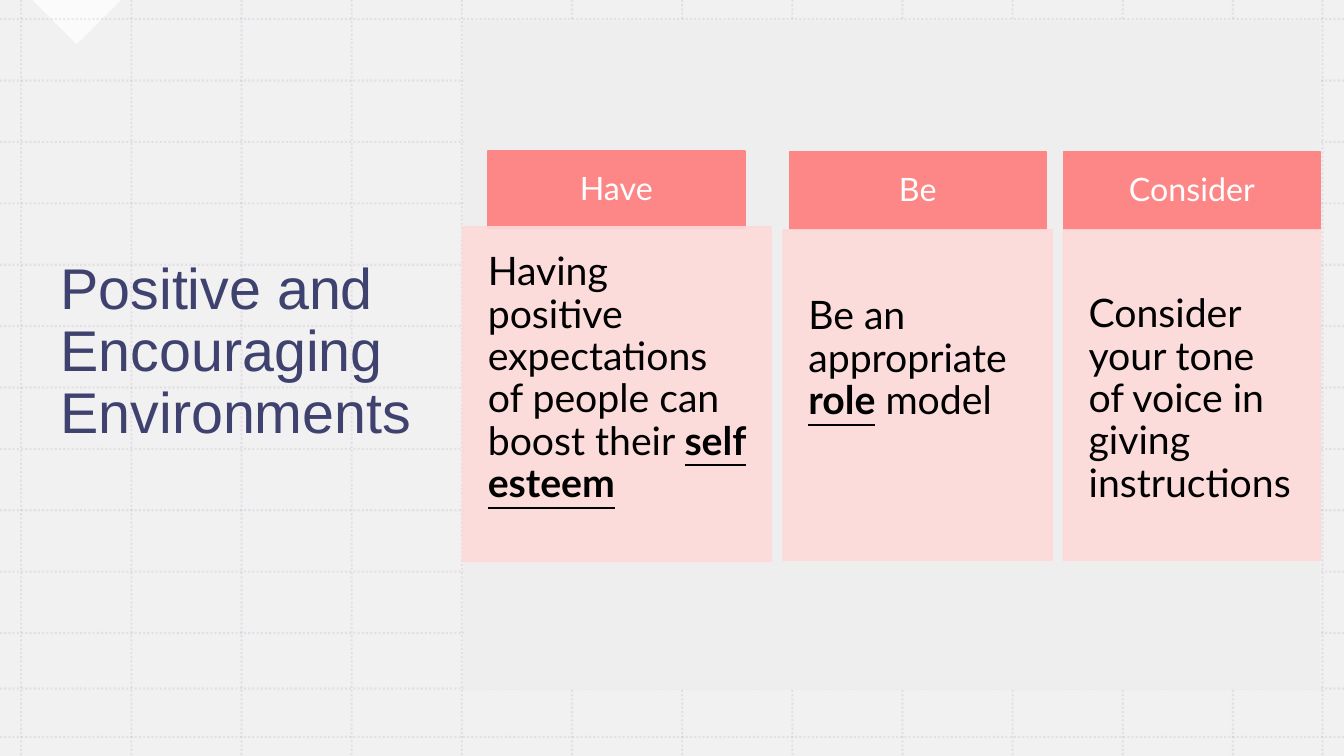
from lxml import etree
from pptx import Presentation
from pptx.dml.color import RGBColor
from pptx.enum.dml import MSO_LINE
from pptx.enum.shapes import MSO_CONNECTOR, MSO_SHAPE
from pptx.enum.text import MSO_ANCHOR, MSO_AUTO_SIZE, PP_ALIGN
from pptx.oxml.ns import qn
from pptx.util import Pt

STRAIGHT = MSO_CONNECTOR.STRAIGHT
RECT = MSO_SHAPE.RECTANGLE
TRIANGLE = MSO_SHAPE.RIGHT_TRIANGLE
DOTTED = MSO_LINE.ROUND_DOT
TOP, MIDDLE = MSO_ANCHOR.TOP, MSO_ANCHOR.MIDDLE
LEFT, CENTER = PP_ALIGN.LEFT, PP_ALIGN.CENTER
NO_FIT = MSO_AUTO_SIZE.NONE

WHITE = RGBColor(0xFF, 0xFF, 0xFF)
BLACK = RGBColor(0x00, 0x00, 0x00)
PAGE = RGBColor(0xF1, 0xF1, 0xF1)
PANEL = RGBColor(0xEE, 0xEE, 0xEE)
GRID = RGBColor(0xB4, 0x95, 0xC2)
NAVY = RGBColor(0x3F, 0x41, 0x6F)
CORAL = RGBColor(0xFD, 0x86, 0x86)
PINK = RGBColor(0xFE, 0xD9, 0xD9)

WIDTH, HEIGHT = 960, 540
GRID_X = [15.12 + 78.69 * i for i in range(12)] + [944.64]
GRID_Y = [13.68 + 43.85 * i for i in range(11)] + [491.76, 526.32]

CARDS = [
    ("Have", (348.48, 108, 183.6, 55.44), (330.48, 162, 220.32, 239.04), 18,
     [("Having positive expectations of people can boost their ", False),
      ("self esteem", True)]),
    ("Be", (563.76, 108.72, 183.6, 55.44), (559.44, 164.16, 192.24, 236.16), 47.3,
     [("Be an appropriate ", False), ("role", True), (" model", False)]),
    ("Consider", (759.6, 108.72, 183.6, 55.44), (759.6, 164.16, 183.6, 236.16), 45.9,
     [("Consider your tone of voice in giving instructions", False)]),
]


def set_alpha(fill_parent, percent):
    color = fill_parent.find(qn("a:solidFill"))[0]
    etree.SubElement(color, qn("a:alpha")).set("val", str(percent * 1000))


def add_block(s, kind, box, color, alpha=100, outlined=False):
    sp = s.shapes.add_shape(kind, *map(Pt, box))
    sp.shadow.inherit = False
    sp.fill.solid()
    sp.fill.fore_color.rgb = color
    set_alpha(sp.element.spPr, alpha)
    if outlined:
        sp.line.color.rgb = color
        sp.line.width = Pt(1)
        set_alpha(sp.element.spPr.find(qn("a:ln")), alpha)
    else:
        sp.line.fill.background()
    return sp


def add_grid_line(s, x1, y1, x2, y2):
    line = s.shapes.add_connector(STRAIGHT, Pt(x1), Pt(y1), Pt(x2), Pt(y2))
    line.line.color.rgb = GRID
    line.line.width = Pt(1.5)
    line.line.dash_style = DOTTED
    sp_pr = line._element.spPr
    set_alpha(sp_pr.find(qn("a:ln")), 20)
    etree.SubElement(sp_pr, qn("a:effectLst"))


def write_text(sp, runs, font, size, color, align, anchor, insets):
    tf = sp.text_frame
    tf.word_wrap = True
    tf.auto_size = NO_FIT
    tf.vertical_anchor = anchor
    tf.margin_left, tf.margin_top, tf.margin_right, tf.margin_bottom = map(Pt, insets)
    p = tf.paragraphs[0]
    p.alignment = align
    p.line_spacing = 0.9
    p.font.name = font
    p.font.size = Pt(size)
    p.font.color.rgb = color
    for text, stressed in runs:
        r = p.add_run()
        r.text = text
        if stressed:
            r.font.bold = True
            r.font.underline = True


def add_title(s, text):
    title = s.shapes.title
    title.left, title.top, title.width, title.height = map(Pt, (36, 34.6, 293, 435.6))
    write_text(title, [(text, False)], "Arial", 41, NAVY, LEFT, MIDDLE,
               (7.2, 3.6, 7.2, 3.6))
    title._element.getparent().append(title._element)


def add_card(s, heading, head_box, body_box, top_inset, runs):
    head = add_block(s, RECT, head_box, CORAL, outlined=True)
    write_text(head, [(heading, False)], "Lato", 23, WHITE, CENTER, MIDDLE, (14.4,) * 4)
    body = add_block(s, RECT, body_box, PINK, alpha=90, outlined=True)
    write_text(body, runs, "Lato", 28, BLACK, LEFT, TOP, (18, top_inset, 17, 18))


def main():
    prs = Presentation()
    prs.slide_width, prs.slide_height = Pt(WIDTH), Pt(HEIGHT)
    s = prs.slides.add_slide(prs.slide_layouts[5])
    s.background.fill.solid()
    s.background.fill.fore_color.rgb = PAGE

    marker = add_block(s, TRIANGLE, (32.4, -22.32, 44.64, 44.64), WHITE, alpha=75)
    marker.rotation = 315
    for x in GRID_X:
        add_grid_line(s, x, 0, x, HEIGHT)
    for y in GRID_Y:
        add_grid_line(s, 0, y, WIDTH, y)

    add_title(s, "Positive and Encouraging Environments")
    add_block(s, RECT, (331.2, 15.12, 611.28, 477.36), PANEL)
    for card in CARDS:
        add_card(s, *card)

    prs.save("out.pptx")


if __name__ == "__main__":
    main()
